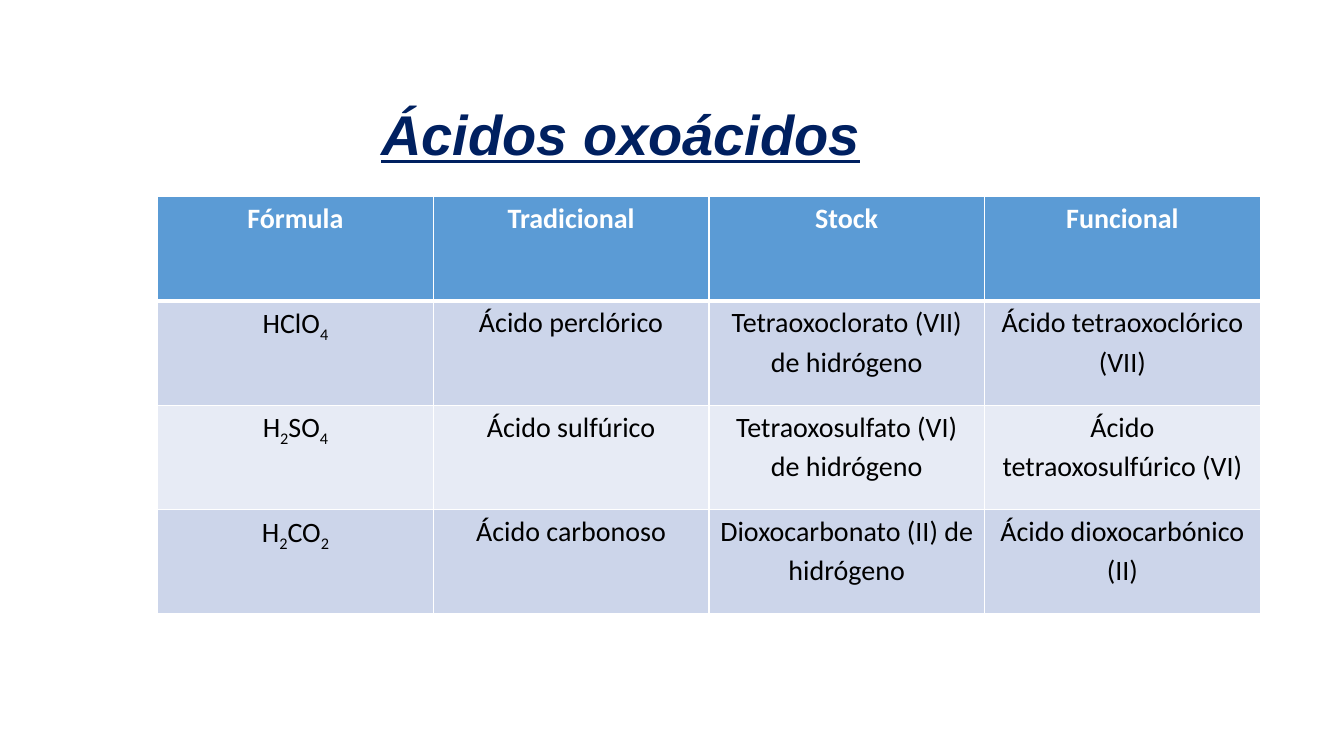
from itertools import groupby

from lxml import etree
from pptx import Presentation
from pptx.dml.color import RGBColor
from pptx.enum import text
from pptx.oxml import ns
from pptx.util import Pt

NAVY = RGBColor(0x00, 0x20, 0x60)
BLUE = RGBColor(0x5B, 0x9B, 0xD5)
DARK = RGBColor(0xCC, 0xD5, 0xEA)
PALE = RGBColor(0xE7, 0xEB, 0xF5)
WHITE = RGBColor(0xFF, 0xFF, 0xFF)
BLACK = RGBColor(0x00, 0x00, 0x00)

ACIDS = [
    ("Fórmula", "Tradicional", "Stock", "Funcional"),
    ("HClO4", "Ácido perclórico", "Tetraoxoclorato (VII) de hidrógeno",
     "Ácido tetraoxoclórico (VII)"),
    ("H2SO4", "Ácido sulfúrico", "Tetraoxosulfato (VI) de hidrógeno",
     "Ácido tetraoxosulfúrico (VI)"),
    ("H2CO2", "Ácido carbonoso", "Dioxocarbonato (II) de hidrógeno",
     "Ácido dioxocarbónico (II)"),
]


def add_run(para, words, size, name, color, bold):
    run = para.add_run()
    run.text = words
    font = run.font
    font.size, font.name, font.bold = Pt(size), name, bold
    font.color.rgb = color
    return run


def add_title(slide, left, top, width, height):
    title = slide.shapes.title
    title.left, title.top = Pt(left), Pt(top)
    title.width, title.height = Pt(width), Pt(height)
    frame = title.text_frame
    frame.word_wrap = False
    frame.auto_size = text.MSO_AUTO_SIZE.SHAPE_TO_FIT_TEXT
    frame.vertical_anchor = text.MSO_ANCHOR.TOP
    para = frame.paragraphs[0]
    para.alignment = text.PP_ALIGN.LEFT
    run = add_run(para, "Ácidos oxoácidos", 40, "Arial", NAVY, True)
    run.font.italic = run.font.underline = True


def add_edges(cell, top, bottom):
    props = cell._tc.get_or_add_tcPr()
    for side, width in (("L", 1), ("R", 1), ("T", top), ("B", bottom)):
        line = etree.SubElement(props, ns.qn(f"a:ln{side}"), w=str(Pt(width)))
        fill = etree.SubElement(line, ns.qn("a:solidFill"))
        etree.SubElement(fill, ns.qn("a:srgbClr"), val=str(WHITE))


def fill_cell(cell, words, row, col):
    head = row == 0
    # Thick rule between the header and the body
    add_edges(cell, 3 if row == 1 else 1, 3 if head else 1)
    cell.fill.solid()
    cell.fill.fore_color.rgb = BLUE if head else (PALE, DARK)[row % 2]
    cell.margin_left = cell.margin_right = Pt(7.2)
    cell.margin_top = cell.margin_bottom = Pt(0)
    para = cell.text_frame.paragraphs[0]
    para.alignment = text.PP_ALIGN.CENTER
    para.line_spacing = 1.15
    para.space_after = Pt(10)
    # Digits in a formula are subscripts
    parts = groupby(words, str.isdigit) if col == 0 else [(False, words)]
    for low, part in parts:
        run = add_run(para, "".join(part), 20, "Calibri",
                      WHITE if head else BLACK, head)
        if low:
            run._r.get_or_add_rPr().set("baseline", "-25000")


def add_names(slide, left, top, width, height):
    rows, cols = len(ACIDS), len(ACIDS[0])
    table = slide.shapes.add_table(rows, cols, Pt(left), Pt(top),
                                   Pt(width), Pt(height)).table
    for col in table.columns:
        col.width = Pt(width / cols)
    for r, acid in enumerate(ACIDS):
        table.rows[r].height = Pt(height / rows)
        for c, words in enumerate(acid):
            fill_cell(table.cell(r, c), words, r, c)


def main():
    deck = Presentation()
    deck.slide_width, deck.slide_height = Pt(960), Pt(540)
    slide = deck.slides.add_slide(deck.slide_layouts[5])
    # Heading
    add_title(slide, 265, 67.7, 360, 55.4)
    # Table of acids and their names
    add_names(slide, 112.6, 140.6, 787.6, 298)
    deck.save("out.pptx")


if __name__ == "__main__":
    main()
